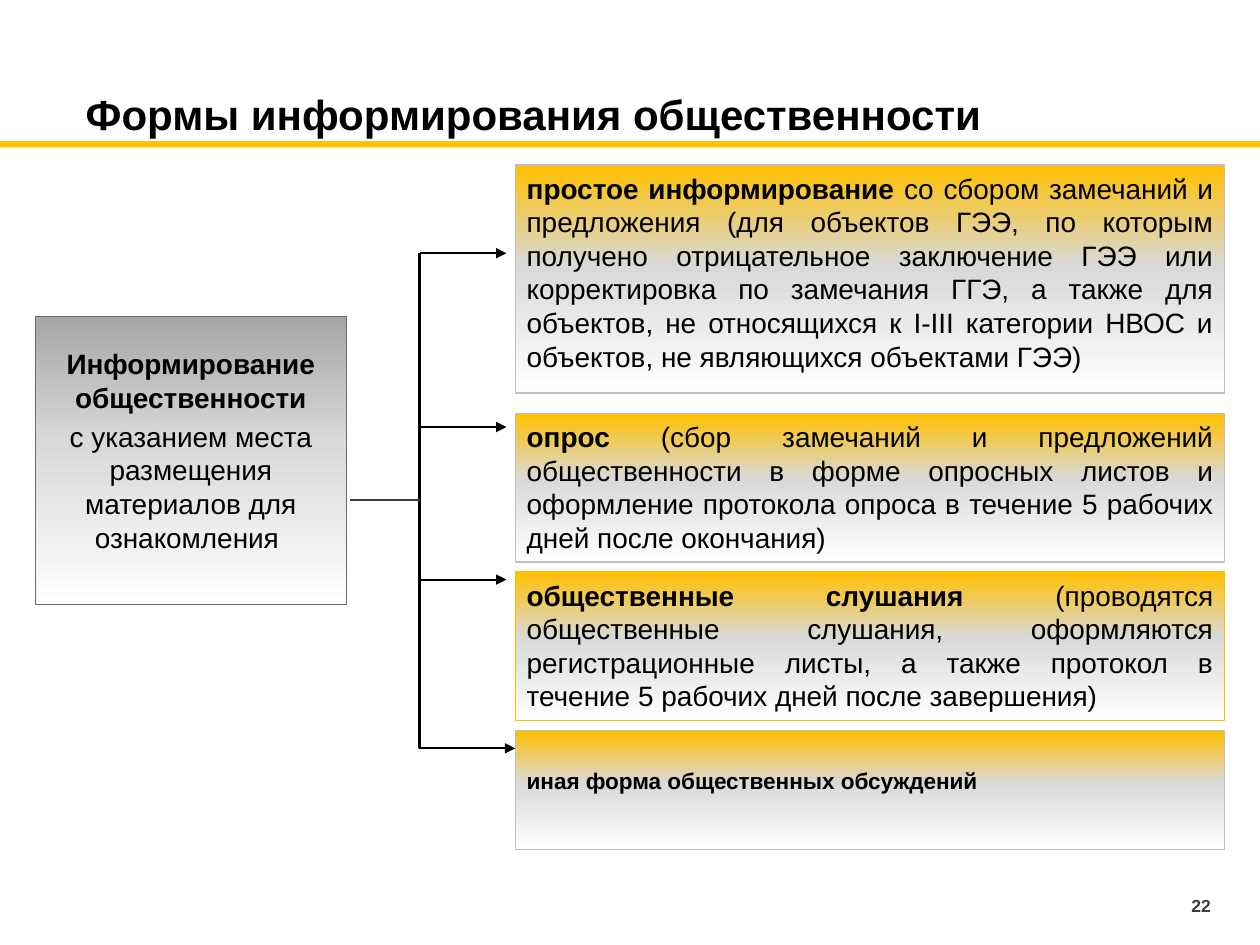
from copy import deepcopy

from pptx import Presentation
from pptx.dml.color import RGBColor
from pptx.enum.shapes import MSO_CONNECTOR, MSO_SHAPE
from pptx.enum.text import MSO_ANCHOR, PP_ALIGN
from pptx.oxml.ns import qn
from pptx.util import Inches, Pt

RECT = MSO_SHAPE.RECTANGLE
STRAIGHT, ELBOW = MSO_CONNECTOR.STRAIGHT, MSO_CONNECTOR.ELBOW
CENTER, JUSTIFY, RIGHT = PP_ALIGN.CENTER, PP_ALIGN.JUSTIFY, PP_ALIGN.RIGHT
TOP, MIDDLE = MSO_ANCHOR.TOP, MSO_ANCHOR.MIDDLE

FONT = "Arial"
BLACK, DARK, GOLD = "000000", "3C3C3C", "FFC000"
LIGHT_GRAY, MID_GRAY, EDGE_GRAY = "BFBFBF", "A6A6A6", "6B6B6B"
INSETS = (0.09, 0.05, 0.09, 0.05)


def rgb(value):
    return RGBColor.from_string(value)


class SlideBuilder:
    def __init__(self, prs):
        self.s = prs.slides.add_slide(prs.slide_layouts[5])

    def set_text(self, sp, paragraphs, size, align, anchor=TOP, color=BLACK, insets=(0, 0, 0, 0)):
        """Fill a shape with paragraphs, each a list of (text, bold) runs."""
        tf = sp.text_frame
        tf.word_wrap = True
        tf.vertical_anchor = anchor
        tf.margin_left, tf.margin_top, tf.margin_right, tf.margin_bottom = map(Inches, insets)
        for i, runs in enumerate(paragraphs):
            p = tf.add_paragraph() if i else tf.paragraphs[0]
            p.alignment = align
            p.space_before = Pt(0.2 * size if i else 0)
            for text, bold in runs:
                r = p.add_run()
                r.text = text
                r.font.name, r.font.size, r.font.bold = FONT, Pt(size), bold
                r.font.color.rgb = rgb(color)

    def title(self, text, *box):
        sp = self.s.shapes.title
        sp.left, sp.top, sp.width, sp.height = map(Inches, box)
        self.set_text(sp, [[(text, True)]], 24, JUSTIFY, MIDDLE)

    def label(self, text, *box):
        sp = self.s.shapes.add_textbox(*map(Inches, box))
        self.set_text(sp, [[(text, True)]], 10, RIGHT, color=DARK)

    def bar(self, color, *box):
        sp = self.s.shapes.add_shape(RECT, *map(Inches, box))
        sp.shadow.inherit = False
        sp.fill.solid()
        sp.fill.fore_color.rgb = rgb(color)
        sp.line.fill.background()
        return sp

    def panel(self, box, paragraphs, top_color, edge, size=16, align=JUSTIFY, pad=0):
        """Gradient box; pad lowers the text below the usual top inset."""
        sp = self.bar(top_color, *box)
        sp.fill.gradient()
        sp.fill.gradient_angle = 90
        first = sp.fill.gradient_stops[0]._gs
        first.addnext(deepcopy(first))
        for stop, (pos, color) in zip(sp.fill.gradient_stops,
                                      [(0, "FFFFFF"), (0.56, "D9D9D9"), (1, top_color)]):
            stop.position = pos
            stop.color.rgb = rgb(color)
        sp.line.color.rgb = rgb(edge)
        sp.line.width = Pt(0.75)
        left, top, right, bottom = INSETS
        self.set_text(sp, paragraphs, size, align, insets=(left, top + pad, right, bottom))

    def line(self, x1, y1, x2, y2, color=BLACK, kind=STRAIGHT, arrow=True):
        c = self.s.shapes.add_connector(kind, *map(Inches, (x1, y1, x2, y2)))
        c.line.color.rgb = rgb(color)
        c.line.width = Pt(1.25)
        if arrow:
            ln = c.line._get_or_add_ln()
            ln.append(ln.makeelement(qn("a:tailEnd"), {"type": "triangle"}))
        sp_pr = c._element.spPr
        sp_pr.append(sp_pr.makeelement(qn("a:effectLst"), {}))
        return c

    def elbow(self, x1, y1, x2, y2):
        """Run vertically first, then horizontally to an arrowhead."""
        c = self.line(x1, y1, x2, y2, kind=ELBOW)
        geometry = c._element.spPr.find(qn("a:prstGeom"))
        guides = geometry.find(qn("a:avLst"))
        guides.append(guides.makeelement(qn("a:gd"), {"name": "adj1", "fmla": "val 0"}))


FORMS = [  # top, height, bold lead, explanation, edge, size, pad
    (1.31, 1.81, "простое информирование ",
     "со сбором замечаний и предложения (для объектов ГЭЭ, по которым получено "
     "отрицательное заключение ГЭЭ или корректировка по замечания ГГЭ, а также для "
     "объектов, не относящихся к I-III категории НВОС и объектов, не являющихся "
     "объектами ГЭЭ) ", LIGHT_GRAY, 16, 0),
    (3.28, 1.18, "опрос ",
     "(сбор замечаний и предложений общественности в форме опросных листов и "
     "оформление протокола опроса в течение 5 рабочих дней после окончания)",
     LIGHT_GRAY, 16, 0),
    (4.54, 1.18, "общественные слушания ",
     "(проводятся общественные слушания, оформляются регистрационные листы, а также "
     "протокол в течение 5 рабочих дней после завершения)", GOLD, 16, 0),
    (5.8, 0.94, "иная форма общественных обсуждений ", "", LIGHT_GRAY, 12.9, 0.24),
]
FORM_LEFT, FORM_WIDTH = 4.09, 5.63
TRUNK_X, ARROW_X = 3.33, 4.02
BRANCHES = [2.01, 3.39, 4.6]


def main():
    prs = Presentation()
    prs.slide_width, prs.slide_height = Inches(10), Inches(7.5)
    b = SlideBuilder(prs)
    b.label("22", 9.36, 7.1, 0.25, 0.18)
    b.bar(GOLD, 0, 1.12, 10, 0.05)
    b.title("Формы информирования общественности", 0.68, 0.48, 8.1, 0.84)

    for top, height, lead, rest, edge, size, pad in FORMS:
        runs = [(lead, True)] + ([(rest, False)] if rest else [])
        b.panel((FORM_LEFT, top, FORM_WIDTH, height), [runs], GOLD, edge, size, pad=pad)
    b.panel((0.28, 2.51, 2.47, 2.29),
            [[("Информирование общественности", True)],
             [("с указанием места размещения материалов для ознакомления ", False)]],
            MID_GRAY, EDGE_GRAY, align=CENTER, pad=0.19)

    b.elbow(TRUNK_X, BRANCHES[0], FORM_LEFT, 5.94)
    b.line(TRUNK_X, 3.97, 2.78, 3.97, DARK, arrow=False)
    for y in BRANCHES:
        b.line(TRUNK_X, y, ARROW_X, y)
    prs.save("out.pptx")


if __name__ == "__main__":
    main()
